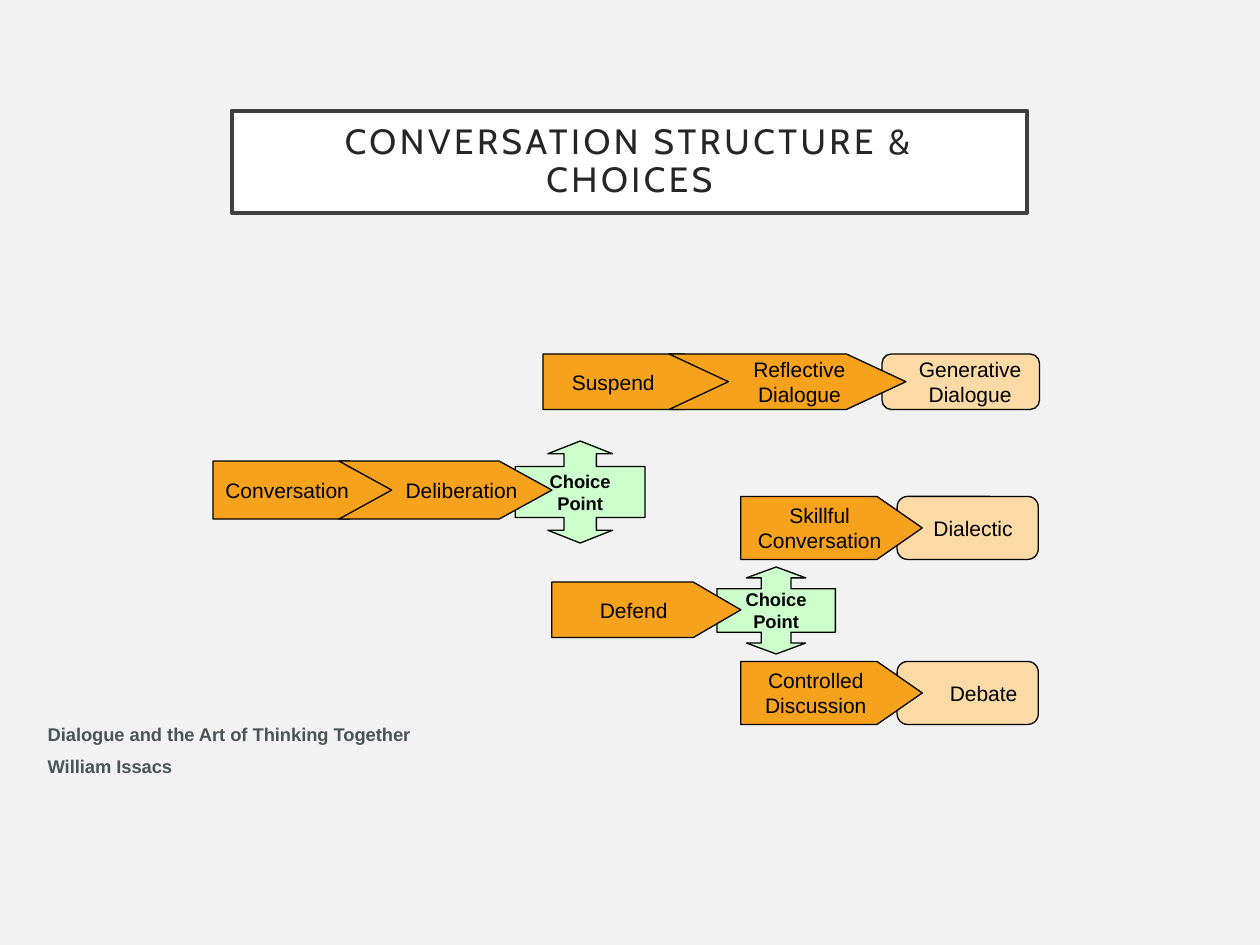
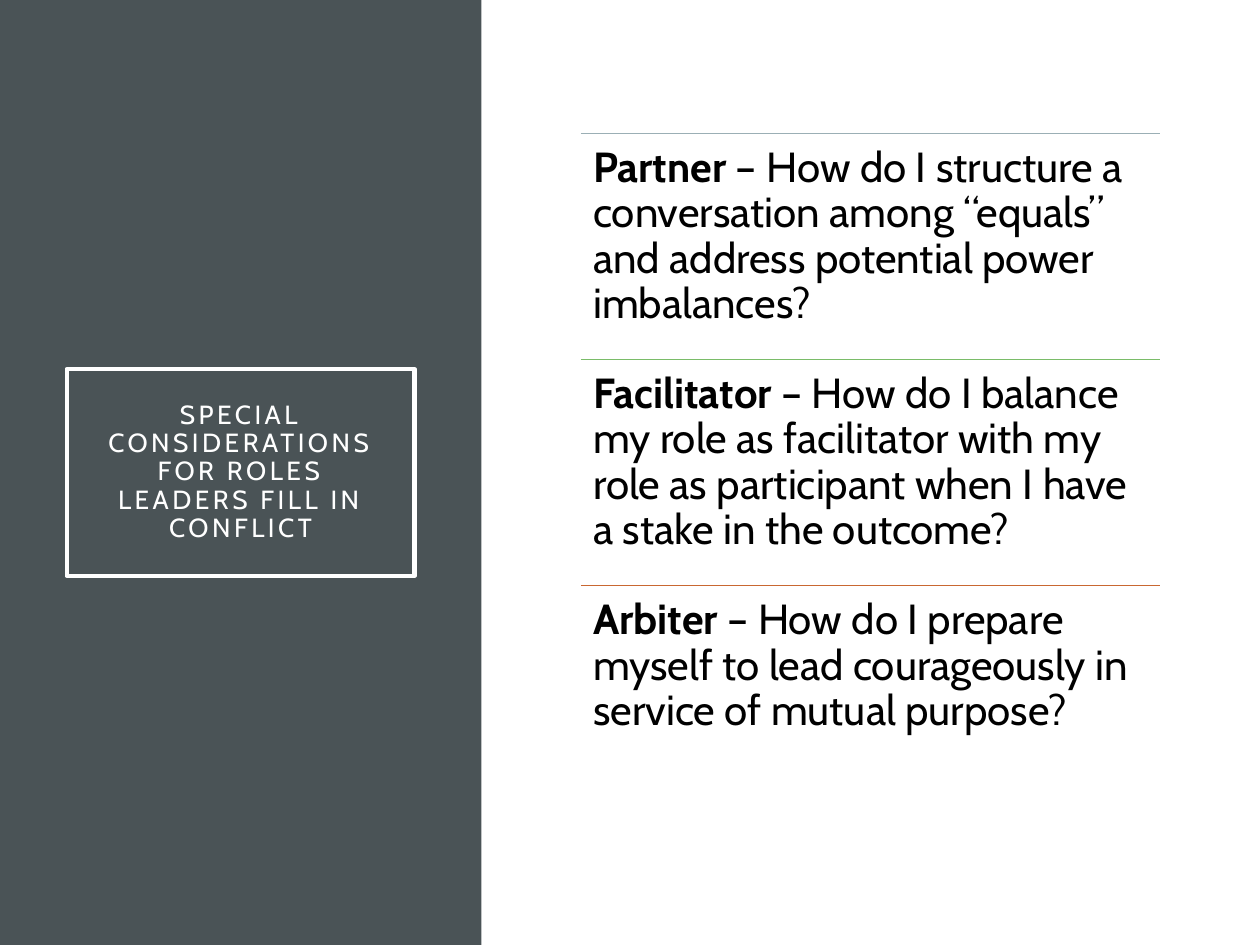
from lxml.etree import SubElement
from pptx import Presentation
from pptx.dml.color import RGBColor
from pptx.enum.shapes import MSO_CONNECTOR, MSO_SHAPE as SHAPE
from pptx.enum.text import MSO_ANCHOR as ANCHOR, PP_ALIGN as ALIGN
from pptx.oxml.ns import qn
from pptx.util import Inches, Pt

BLACK = RGBColor(0x00, 0x00, 0x00)
WHITE = RGBColor(0xFF, 0xFF, 0xFF)
PALE = RGBColor(0xF2, 0xF2, 0xF2)
SLATE = RGBColor(0x4A, 0x53, 0x56)
INK = RGBColor(0x26, 0x26, 0x26)
FRAME = RGBColor(0x40, 0x40, 0x40)
ORANGE = RGBColor(0xF6, 0xA2, 0x1D)
PEACH = RGBColor(0xFB, 0xDA, 0xA5)
MINT = RGBColor(0xCC, 0xFF, 0xCC)
RULES = (RGBColor(0x9B, 0xAF, 0xB5), RGBColor(0x7A, 0xBC, 0x69), RGBColor(0xC9, 0x67, 0x31))

WIDTH, HEIGHT = 10, 7.5
TITLE_FONT, LABEL_FONT = "Cabin", "Arial"

# Lane name: top, height
LANES = {
    "suspend": (2.81, 0.44),
    "start": (3.66, 0.46),
    "skillful": (3.94, 0.5),
    "defend": (4.62, 0.44),
    "controlled": (5.25, 0.5),
}

# Left, top, width, height, arrow proportion
CHOICE_POINTS = [
    (4.09, 3.5, 1.03, 0.81, 0.317),
    (5.69, 4.5, 0.94, 0.69, 0.341),
]

# Lane, left, width, text, text left, text width, alignment
OUTCOMES = [
    ("suspend", 7, 1.25, "Generative\nDialogue", 7.17, 1.06, ALIGN.CENTER),
    ("skillful", 7.12, 1.12, "Dialectic", 7.31, 0.94, ALIGN.LEFT),
    ("controlled", 7.12, 1.12, "Debate", 7.44, 0.94, ALIGN.LEFT),
]
STEPS = [
    ("start", 1.69, 1.44, "Conversation", 1.69, 1.25, ALIGN.LEFT),
    ("suspend", 4.31, 1.5, "Suspend", 4.44, 1.19, ALIGN.LEFT),
    ("skillful", 5.88, 1.44, "Skillful\nConversation", 5.88, 1.25, ALIGN.CENTER),
    ("defend", 4.38, 1.5, "Defend", 4.38, 1.3, ALIGN.CENTER),
    ("controlled", 5.88, 1.44, "Controlled\nDiscussion", 5.88, 1.19, ALIGN.CENTER),
]
NEXT_STEPS = [
    ("start", 2.69, 1.69, "Deliberation", 3.12, 1.25, ALIGN.LEFT),
    ("suspend", 5.31, 1.88, "Reflective\nDialogue", 5.72, 1.25, ALIGN.CENTER),
]
# Preset, fill, point length as a share of lane height by lane, items
LAYERS = [
    (SHAPE.ROUNDED_RECTANGLE, PEACH, {}, OUTCOMES),
    (SHAPE.PENTAGON, ORANGE,
     {"start": 0.775, "suspend": 0.857, "skillful": 0.719, "defend": 0.857,
      "controlled": 0.719}, STEPS),
    (SHAPE.CHEVRON, ORANGE, {"start": 0.91, "suspend": 1.071}, NEXT_STEPS),
]
CREDIT = ["Dialogue and the Art of Thinking Together", "William Issacs"]

ROLES = [
    ("Partner", " – How do I structure a conversation among “equals” and address "
                "potential power imbalances?"),
    ("Facilitator", " – How do I balance my role as facilitator with my role as "
                    "participant when I have a stake in the outcome?"),
    ("Arbiter", " – How do I prepare myself to lead courageously in service of "
                "mutual purpose?"),
]
ROLE_LEFT, ROLE_TOP, ROLE_WIDTH, ROLE_STEP = 4.61, 1.06, 4.6, 1.795


def inches(*values):
    return [Inches(v) for v in values]


def add_slide(prs, color):
    s = prs.slides.add_slide(prs.slide_layouts[6])
    s.background.fill.solid()
    s.background.fill.fore_color.rgb = color
    return s


def add_shape(s, preset, box, fill=None, line=None, line_width=0.75):
    sp = s.shapes.add_shape(preset, *inches(*box))
    sp.shadow.inherit = False
    if fill is None:
        sp.fill.background()
    else:
        sp.fill.solid()
        sp.fill.fore_color.rgb = fill
    if line is None:
        sp.line.fill.background()
    else:
        sp.line.color.rgb = line
        sp.line.width = Pt(line_width)
    return sp


def set_frame(tf, inset_x, inset_y, anchor=ANCHOR.TOP, wrap=True):
    tf.word_wrap = wrap
    tf.vertical_anchor = anchor
    tf.margin_left = tf.margin_right = Inches(inset_x)
    tf.margin_top = tf.margin_bottom = Inches(inset_y)


def format_runs(p, font, size, color=BLACK, bold=False, align=ALIGN.LEFT):
    p.alignment = align
    for r in p.runs:
        r.font.name = font
        r.font.size = Pt(size)
        r.font.color.rgb = color
        r.font.bold = bold


def add_title(s, text, box, size, color, fill, line):
    sp = add_shape(s, SHAPE.RECTANGLE, box, fill, line, 2.5)
    set_frame(sp.text_frame, 0.2, 0.2, ANCHOR.MIDDLE)
    p = sp.text_frame.paragraphs[0]
    p.text = text
    p.line_spacing = 0.9
    format_runs(p, TITLE_FONT, size, color, align=ALIGN.CENTER)
    for r in p.runs:
        r._r.get_or_add_rPr().set("spc", "200")


def add_text_box(s, box, inset_x, inset_y, anchor=ANCHOR.TOP):
    tf = s.shapes.add_textbox(*inches(*box)).text_frame
    set_frame(tf, inset_x, inset_y, anchor)
    return tf


def add_choice_point(s, left, top, width, height, arrow):
    sp = add_shape(s, SHAPE.UP_DOWN_ARROW_CALLOUT, (left, top, width, height), MINT, BLACK)
    for i, value in enumerate((arrow, arrow, 0.125, 0.5)):
        sp.adjustments[i] = value
    set_frame(sp.text_frame, 0.1, 0.05, ANCHOR.MIDDLE, wrap=False)
    p = sp.text_frame.paragraphs[0]
    p.text = "Choice\nPoint"
    format_runs(p, LABEL_FONT, 10.5, bold=True, align=ALIGN.CENTER)


def add_step(s, preset, fill, points, item):
    lane, left, width, text, text_left, text_width, align = item
    top, height = LANES[lane]
    sp = add_shape(s, preset, (left, top, width, height), fill, BLACK)
    if lane in points:
        sp.adjustments[0] = points[lane]
    tf = add_text_box(s, (text_left, top, text_width, height), 0.1, 0, ANCHOR.MIDDLE)
    p = tf.paragraphs[0]
    p.text = text
    format_runs(p, LABEL_FONT, 12, align=align)


def add_rule(s, left, top, width, color):
    c = s.shapes.add_connector(MSO_CONNECTOR.STRAIGHT, *inches(left, top, left + width, top))
    c.line.color.rgb = color
    c.line.width = Pt(0.5)
    SubElement(c._element.spPr, qn("a:effectLst"))


def build_conversation(prs):
    s = add_slide(prs, PALE)
    add_title(s, "CONVERSATION STRUCTURE & CHOICES", (1.84, 0.88, 6.31, 0.81),
              20, INK, WHITE, FRAME)
    for point in CHOICE_POINTS:
        add_choice_point(s, *point)
    for preset, fill, points, items in LAYERS:
        for item in items:
            add_step(s, preset, fill, points, item)
    tf = add_text_box(s, (0.28, 5.69, 3.25, 0.54), 0.1, 0.05)
    tf.text = "\n".join(CREDIT)
    for p in tf.paragraphs:
        format_runs(p, LABEL_FONT, 10.5, SLATE, bold=True)
    tf.paragraphs[1].space_before = Pt(5.5)


def build_roles(prs):
    s = add_slide(prs, WHITE)
    add_shape(s, SHAPE.RECTANGLE, (0, 0, 3.82, HEIGHT), SLATE)
    add_title(s, "SPECIAL CONSIDERATIONS FOR ROLES LEADERS FILL IN CONFLICT",
              (0.53, 2.93, 2.76, 1.64), 15, WHITE, None, WHITE)
    for i, ((role, question), color) in enumerate(zip(ROLES, RULES)):
        top = ROLE_TOP + i * ROLE_STEP
        add_rule(s, ROLE_LEFT, top, ROLE_WIDTH, color)
        tf = add_text_box(s, (ROLE_LEFT, top, ROLE_WIDTH, ROLE_STEP), 0.1, 0.1)
        p = tf.paragraphs[0]
        p.text = role
        p.add_run().text = question
        p.line_spacing = 0.9
        format_runs(p, TITLE_FONT, 24)
        p.runs[0].font.bold = True


def main():
    prs = Presentation()
    prs.slide_width, prs.slide_height = inches(WIDTH, HEIGHT)
    build_conversation(prs)
    build_roles(prs)
    prs.save("out.pptx")


if __name__ == "__main__":
    main()
